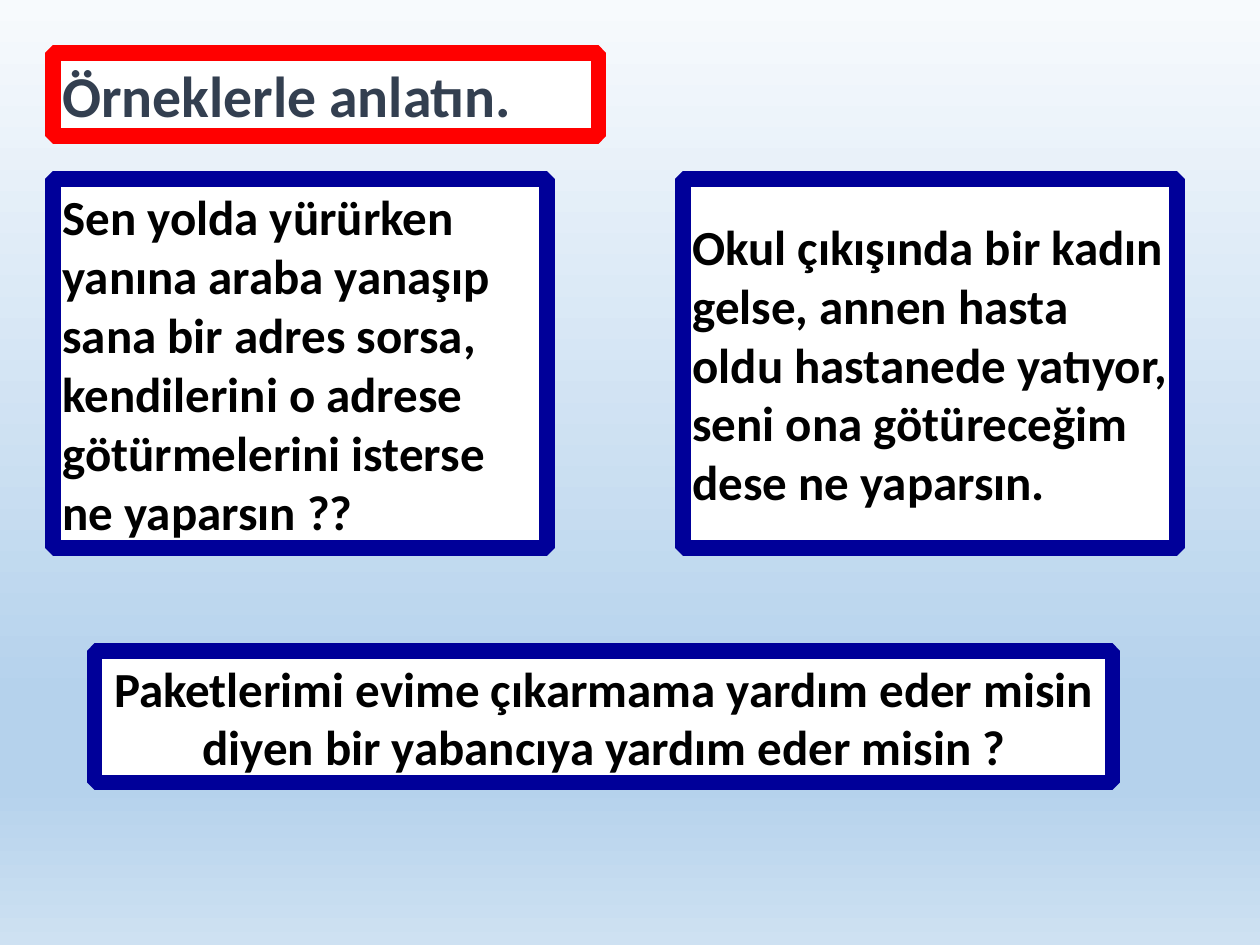
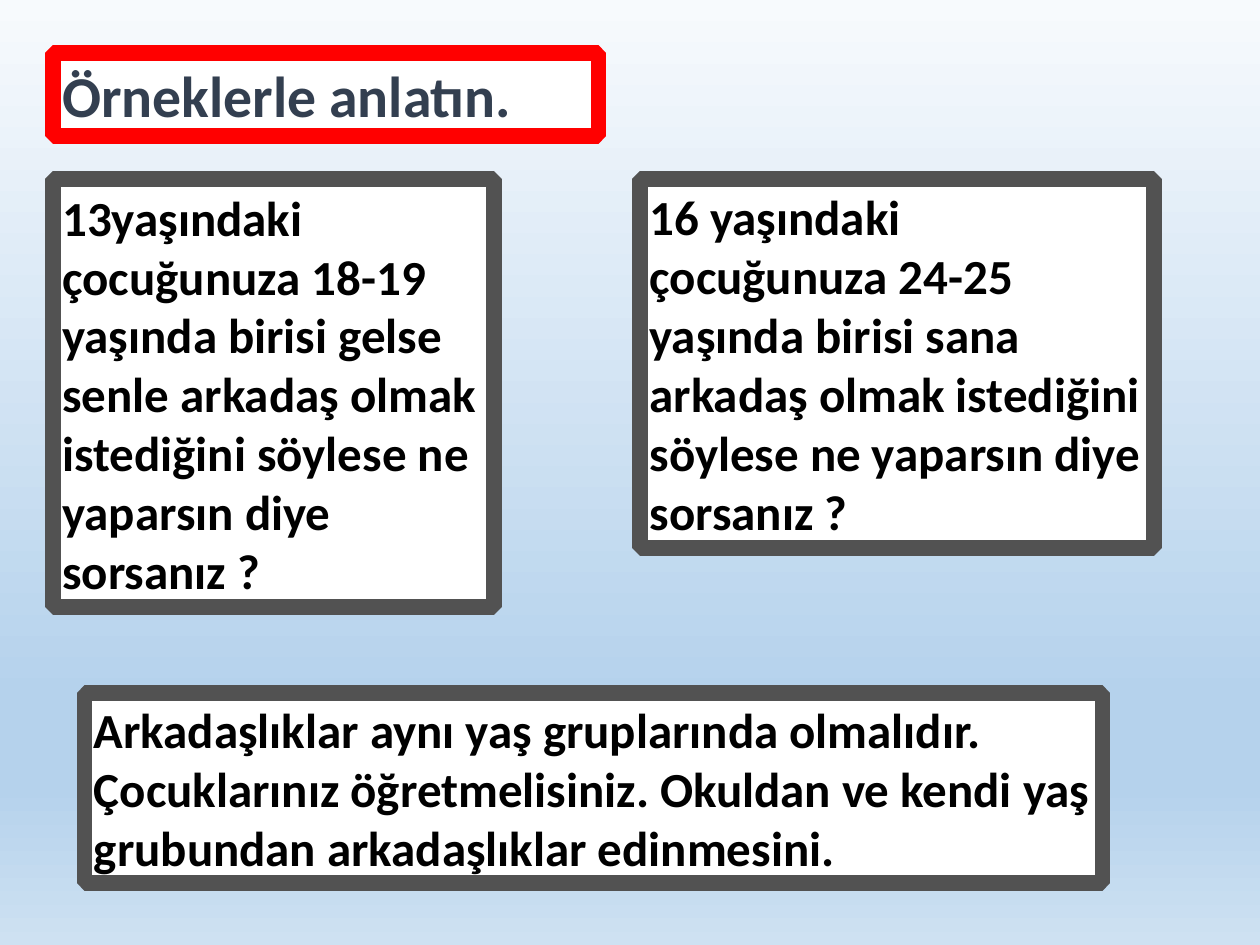
from lxml import etree
from pptx import Presentation
from pptx.dml.color import RGBColor
from pptx.enum import shapes, text
from pptx.oxml.ns import qn
from pptx.util import Inches, Pt

# Content: each box is (left, top, width, height, words, alignment)
LEFT, CENTER = text.PP_ALIGN.LEFT, text.PP_ALIGN.CENTER
TITLE = (0.42, 0.42, 4.33, 0.66, "Örneklerle anlatın.", LEFT)
SLIDES = [
    {"border": "000099", "boxes": [
        (0.42, 1.42, 3.92, 2.93,
         "Sen yolda yürürken yanına araba yanaşıp sana bir adres sorsa, "
         "kendilerini o adrese götürmelerini isterse ne yaparsın ??", LEFT),
        (5.42, 1.42, 3.92, 2.93,
         "Okul çıkışında bir kadın gelse, annen hasta oldu hastanede yatıyor, "
         "seni ona götüreceğim dese ne yaparsın.", LEFT),
        (0.75, 5.17, 8.08, 1.04,
         "Paketlerimi evime çıkarmama yardım eder misin diyen bir yabancıya "
         "yardım eder misin ?", CENTER),
    ]},
    {"border": "525252", "boxes": [
        (0.42, 1.42, 3.5, 3.4,
         "13yaşındaki çocuğunuza 18-19 yaşında birisi gelse senle arkadaş olmak "
         "istediğini söylese ne yaparsın diye sorsanız ?", LEFT),
        (5.08, 1.42, 4.08, 2.93,
         "16 yaşındaki çocuğunuza 24-25 yaşında birisi sana arkadaş olmak "
         "istediğini söylese ne yaparsın diye sorsanız ?", LEFT),
        (0.67, 5.5, 8.08, 1.51,
         "Arkadaşlıklar aynı yaş gruplarında olmalıdır. Çocuklarınız "
         "öğretmelisiniz. Okuldan ve kendi yaş grubundan arkadaşlıklar "
         "edinmesini.", LEFT),
    ]},
]

# Shared style
FONT = "Calibri"
TITLE_STYLE = {"border": "FF0000", "ink": "333F50", "size": 33}
SKY = [(0, "F7FAFD"), (74, "B5D2EC"), (83, "B5D2EC"), (100, "CEE1F2")]


def color(code):
    return RGBColor.from_string(code)


def paint_sky(page):
    """Fill the background with the vertical four-stop gradient."""
    fill = page.background.fill
    fill.gradient()
    fill.gradient_angle = 270
    stops = next(page.background._cSld.iter(qn("a:gsLst")))
    for stop in list(stops):
        stops.remove(stop)
    for percent, code in SKY:
        stop = etree.SubElement(stops, qn("a:gs"), pos=str(percent * 1000))
        etree.SubElement(stop, qn("a:srgbClr"), val=code)


def add_framed_text(page, content, border, ink="000000", size=28):
    left, top, width, height, words, alignment = content
    box = page.shapes.add_shape(
        shapes.MSO_SHAPE.RECTANGLE,
        Inches(left), Inches(top), Inches(width), Inches(height))
    box.shadow.inherit = False
    box.fill.solid()
    box.fill.fore_color.rgb = color("FFFFFF")

    # Thick border with bevelled corners
    box.line.color.rgb = color(border)
    box.line.width = Pt(9)
    etree.SubElement(box.line._get_or_add_ln(), qn("a:bevel"))

    frame = box.text_frame
    frame.word_wrap = True
    frame.auto_size = text.MSO_AUTO_SIZE.SHAPE_TO_FIT_TEXT
    frame.vertical_anchor = text.MSO_ANCHOR.MIDDLE
    frame.margin_left = frame.margin_right = Pt(5.4)
    frame.margin_top = frame.margin_bottom = Pt(2.7)

    para = frame.paragraphs[0]
    para.alignment = alignment
    span = para.add_run()
    span.text = words
    span.font.name = FONT
    span.font.size = Pt(size)
    span.font.bold = True
    span.font.color.rgb = color(ink)


def main():
    deck = Presentation()
    deck.slide_width, deck.slide_height = Inches(10), Inches(7.5)
    for slide in SLIDES:
        page = deck.slides.add_slide(deck.slide_layouts[6])
        paint_sky(page)
        add_framed_text(page, TITLE, **TITLE_STYLE)
        for content in slide["boxes"]:
            add_framed_text(page, content, slide["border"])
    deck.save("out.pptx")


if __name__ == "__main__":
    main()
